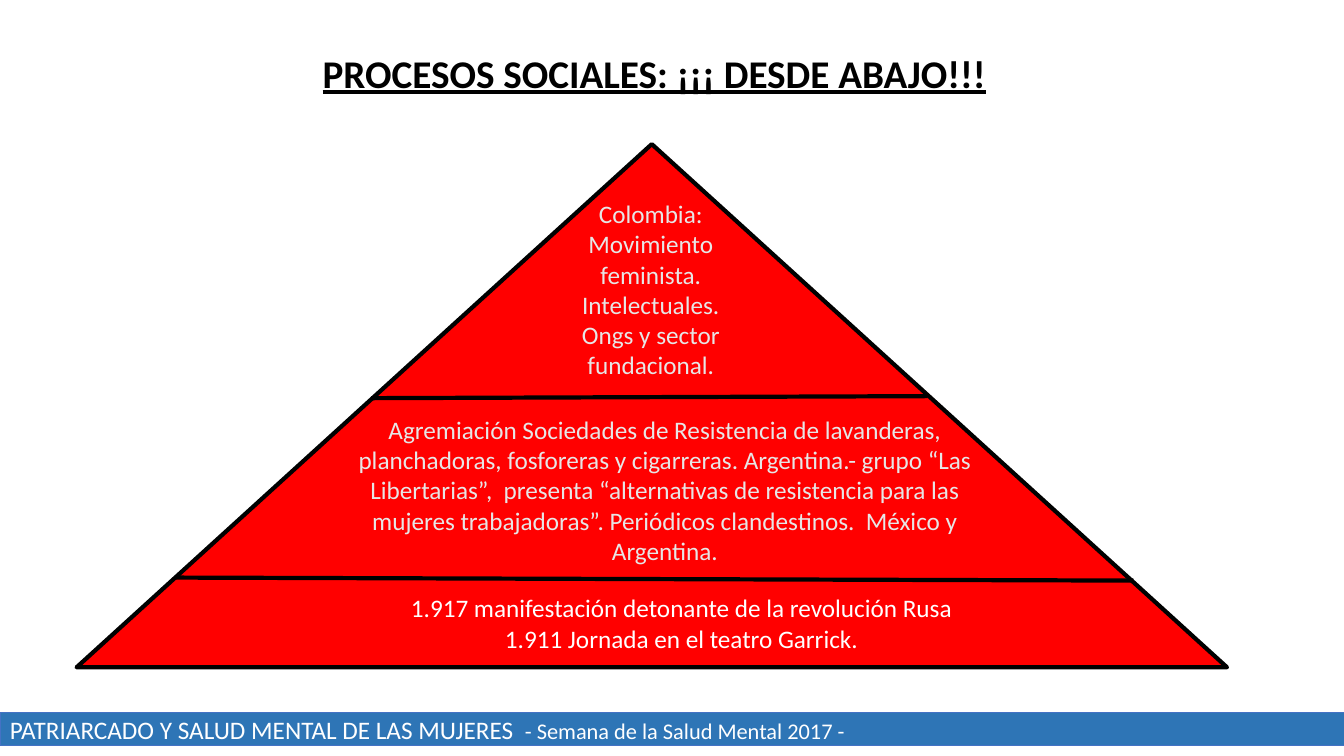
from lxml.etree import SubElement
from pptx import Presentation
from pptx.dml.color import RGBColor
from pptx.enum.shapes import MSO_CONNECTOR, MSO_SHAPE
from pptx.enum.text import MSO_ANCHOR, PP_ALIGN
from pptx.oxml.ns import qn
from pptx.util import Emu, Pt

PX = 9144  # 100 px to the inch
SLIDE_W, SLIDE_H = 1333, 750
FONT = "Calibri"
BLACK, WHITE, PALE, RED = "000000", "FFFFFF", "E7E6E6", "FF0000"
BAND_BLUE, BAND_EDGE = "2E75B6", "4472C4"

# Tiers from top to bottom: text box relative to the pyramid, colour, paragraphs
TIERS = [
    ((463, 49, 213, 192), PALE,
     ["Colombia: Movimiento feminista.", "Intelectuales.", "Ongs y sector fundacional."]),
    ((250, 263, 667, 162), PALE,
     ["Agremiación Sociedades de Resistencia de lavanderas, planchadoras, fosforeras y "
      "cigarreras. Argentina.- grupo “Las Libertarias”,  presenta “alternativas de "
      "resistencia para las mujeres trabajadoras”. Periódicos clandestinos.  México y "
      "Argentina."]),
    ((202, 440, 796, 71), WHITE,
     ["1.917 manifestación detonante de la revolución Rusa",
      "1.911 Jornada en el teatro Garrick."]),
]
# Tier borders: x1, y1, x2, y2 relative to the pyramid
BORDERS = [(292, 252, 844, 250), (98, 430, 1048, 433)]


def px(*lengths):
    return [Emu(length * PX) for length in lengths]


def rgb(value):
    return RGBColor.from_string(value)


def set_font(font, size, color, bold=None, underline=None):
    font.name, font.size = FONT, Pt(size)
    font.color.rgb = rgb(color)
    font.bold, font.underline = bold, underline


def add_filled(slide, preset, box, fill, edge, edge_width):
    shape = slide.shapes.add_shape(preset, *px(*box))
    shape.shadow.inherit = False
    shape.fill.solid()
    shape.fill.fore_color.rgb = rgb(fill)
    shape.line.color.rgb = rgb(edge)
    shape.line.width = Pt(edge_width)
    return shape


def add_title(slide, box):
    title = slide.shapes.title
    title.left, title.top, title.width, title.height = px(*box)
    title.text_frame.vertical_anchor = MSO_ANCHOR.MIDDLE
    heading = title.text_frame.paragraphs[0]
    heading.text = "PROCESOS SOCIALES: ¡¡¡ DESDE ABAJO!!!"
    heading.alignment = PP_ALIGN.JUSTIFY
    heading.line_spacing = 0.9
    set_font(heading.font, 28, BLACK, bold=True, underline=True)


def add_border(slide, ends):
    border = slide.shapes.add_connector(MSO_CONNECTOR.STRAIGHT, *px(*ends))
    border.line.color.rgb = rgb(BLACK)
    border.line.width = Pt(3)
    SubElement(border._element.spPr, qn("a:effectLst"))


def add_tier_text(slide, box, color, lines):
    frame = slide.shapes.add_textbox(*px(*box)).text_frame
    frame.word_wrap = True
    frame.text = "\n".join(lines)
    for paragraph in frame.paragraphs:
        paragraph.alignment = PP_ALIGN.CENTER
        set_font(paragraph.font, 18, color)


def add_pyramid(slide, box):
    left, top = box[:2]
    add_filled(slide, MSO_SHAPE.ISOSCELES_TRIANGLE, box, RED, BLACK, 3)
    for x1, y1, x2, y2 in BORDERS:
        add_border(slide, (left + x1, top + y1, left + x2, top + y2))
    for (x, y, width, height), color, lines in TIERS:
        add_tier_text(slide, (left + x, top + y, width, height), color, lines)


def add_footer(slide, box):
    band = add_filled(slide, MSO_SHAPE.RECTANGLE, box, BAND_BLUE, BAND_EDGE, 0.5)
    band.text_frame.word_wrap = True
    band.text_frame.vertical_anchor = MSO_ANCHOR.MIDDLE
    caption = band.text_frame.paragraphs[0]
    caption.alignment = PP_ALIGN.LEFT
    set_font(caption.font, 18, WHITE)
    caption.add_run().text = "PATRIARCADO Y SALUD MENTAL DE LAS MUJERES  "
    event = caption.add_run()
    event.text = "- Semana de la Salud Mental 2017 -"
    event.font.size = Pt(16)


def main():
    deck = Presentation()
    deck.slide_width, deck.slide_height = px(SLIDE_W, SLIDE_H)
    slide = deck.slides.add_slide(deck.slide_layouts[5])  # Title Only
    add_title(slide, (310, 7, SLIDE_W - 310, 136))
    add_pyramid(slide, (76, 143, 1141, 519))
    add_footer(slide, (0, 707, SLIDE_W, 33))
    deck.save("out.pptx")


if __name__ == "__main__":
    main()
